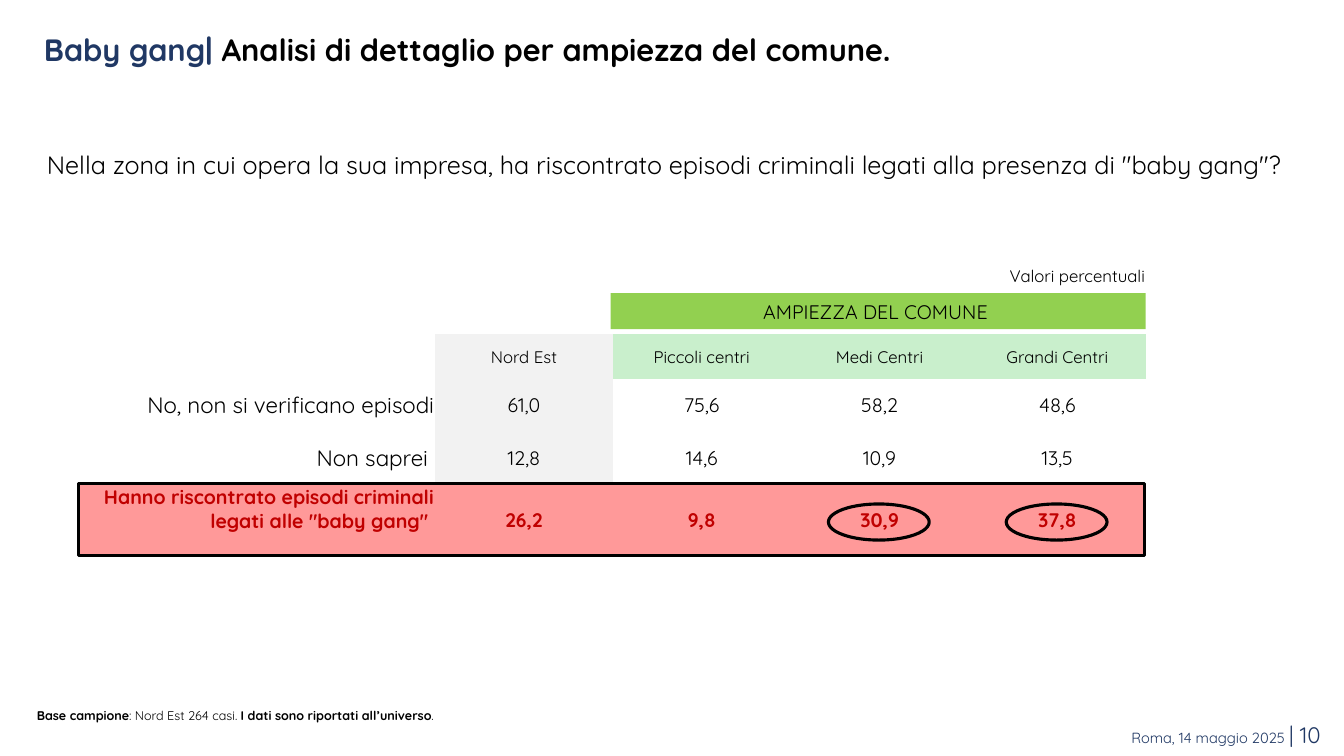
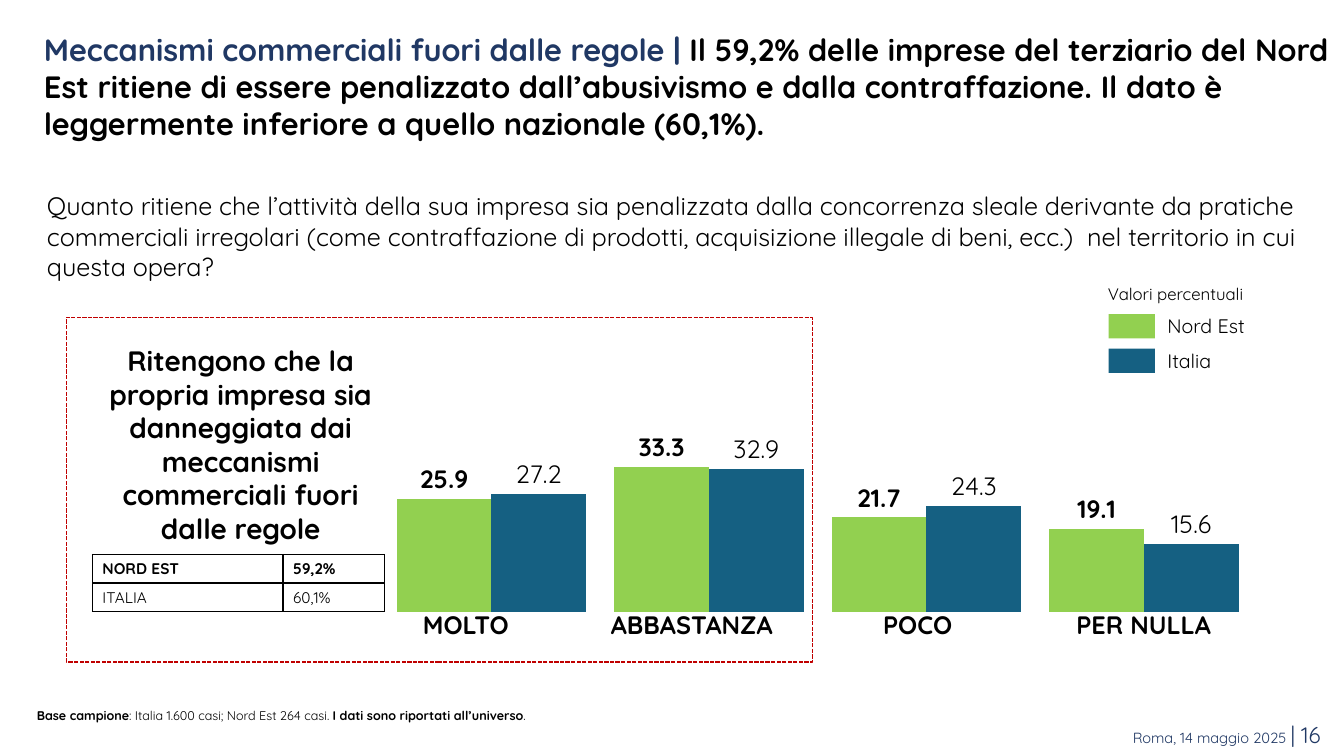
from dataclasses import dataclass
from typing import NamedTuple

from pptx import Presentation, util as u
from pptx.chart.data import CategoryChartData
from pptx.dml.color import RGBColor
from pptx.enum import chart as ch, dml, shapes as sh, text as tx
from pptx.oxml import parse_xml
from pptx.oxml.ns import nsdecls, qn

BLACK = RGBColor(0x00, 0x00, 0x00)
WHITE = RGBColor(0xFF, 0xFF, 0xFF)
NAVY = RGBColor(0x20, 0x38, 0x64)
GREEN = RGBColor(0x92, 0xD0, 0x50)
BLUE = RGBColor(0x15, 0x60, 0x82)
MINT = RGBColor(0xC9, 0xEF, 0xCC)
GREY = RGBColor(0xF2, 0xF2, 0xF2)
PINK = RGBColor(0xFF, 0x99, 0x99)
RED = RGBColor(0xC0, 0x00, 0x00)

FONT = "Quicksand"
COLS, ROWS = 160, 90
UNIT = u.Inches(13.333) / COLS
NO_STYLE = "{2D5ABB26-0587-4C30-8999-92F81FD0307C}"
LEFT, MID, RIGHT = tx.PP_ALIGN.LEFT, tx.PP_ALIGN.CENTER, tx.PP_ALIGN.RIGHT


class Box(NamedTuple):
    """A place on the grid, in columns and rows."""
    x: float
    y: float
    w: float
    h: float


class Run(NamedTuple):
    text: str
    size: float
    bold: bool = False
    color: RGBColor = BLACK


@dataclass
class Series:
    name: str
    color: RGBColor
    bold: bool
    values: tuple[float, ...]


@dataclass
class Line:
    """A table row: label, values and their looks."""
    label: str
    values: tuple[str, ...]
    height: float
    size: float
    fills: tuple
    color: RGBColor = BLACK


def grid(n: float) -> int:
    return round(n * UNIT)


def place(box: Box) -> list[int]:
    return [grid(n) for n in box]


def write(frame, runs: list[Run], align=LEFT, space: float = 1) -> None:
    para = frame.paragraphs[0]
    para.alignment = align
    para.line_spacing = space
    for item in runs:
        run = para.add_run()
        run.text = item.text
        font = run.font
        font.name, font.size, font.bold = FONT, u.Pt(item.size), item.bold
        font.color.rgb = item.color


def label(slide, box: Box, runs: list[Run], align=LEFT, space: float = 1):
    frame = slide.shapes.add_textbox(*place(box)).text_frame
    frame.word_wrap = True
    write(frame, runs, align, space)
    return frame


def paint(part, color: RGBColor | None) -> None:
    if color is None:
        part.fill.background()
    else:
        part.fill.solid()
        part.fill.fore_color.rgb = color


def draw(slide, kind, box: Box, fill=None, line=None, width: float = 2.25):
    shape = slide.shapes.add_shape(kind, *place(box))
    shape.shadow.inherit = False
    paint(shape, fill)
    if line is None:
        shape.line.fill.background()
    else:
        shape.line.color.rgb = line
        shape.line.width = u.Pt(width)
    return shape


def table(slide, x: float, y: float, cols: list[float], rows: list[float]):
    box = Box(x, y, sum(cols), sum(rows))
    frame = slide.shapes.add_table(len(rows), len(cols), *place(box))
    for style in frame.element.iter(qn("a:tableStyleId")):
        style.text = NO_STYLE
    for col, width in zip(frame.table.columns, cols):
        col.width = grid(width)
    for row, height in zip(frame.table.rows, rows):
        row.height = grid(height)
    return frame


def border(frame) -> None:
    """Put a thin black line round every cell."""
    for props in frame.element.iter(qn("a:tcPr")):
        for i, side in enumerate("LRTB"):
            props.insert(i, parse_xml(
                f'<a:ln{side} {nsdecls("a")} w="12700"><a:solidFill>'
                f'<a:srgbClr val="{BLACK}"/></a:solidFill></a:ln{side}>'))


def start(deck, number: int, title: list[str], ask: str, ask_y: float, base: str):
    """Add a slide with title, question, base note and footer."""
    slide = deck.slides.add_slide(deck.slide_layouts[6])
    label(slide, Box(75.2, 85.3, 83.2, 4.4),
          [Run("Roma, 14 maggio 2025 ", 10.5, color=NAVY),
           Run(f"| {number}", 16, color=NAVY)], RIGHT)
    head = label(slide, Box(4.4, 3.2, 155, 5.4),
                 [Run(title[0], 22, True, NAVY), Run(title[1], 22, True)])
    head.margin_left = head.margin_right = u.Inches(0.07)
    head.margin_top = head.margin_bottom = u.Inches(0.04)
    label(slide, Box(4.4, ask_y, 152, 8.5), [Run(ask, 18)])
    label(slide, Box(3.2, 83.5, 150.5, 3),
          [Run("Base campione", 9, True), Run(f": {base}. ", 9),
           Run("I dati sono riportati all’universo", 9, True), Run(".", 9)],
          space=1.1)
    return slide


def gangs(deck) -> None:
    slide = start(
        deck, 10, ["Baby gang|", " Analisi di dettaglio per ampiezza del comune."],
        "Nella zona in cui opera la sua impresa, ha riscontrato episodi criminali "
        'legati alla presenza di "baby gang"?', 17.2, "Nord Est 264 casi")
    plain = (None, GREY, None, None, None)
    lines = [
        Line("", ("Nord Est", "Piccoli centri", "Medi Centri", "Grandi Centri"),
             5.3, 12, (WHITE, GREY, MINT, MINT, MINT)),
        Line("No, non si verificano episodi", ("61,0", "75,6", "58,2", "48,6"),
             6.25, 16, plain),
        Line("Non saprei ", ("12,8", "14,6", "10,9", "13,5"), 6.25, 16, plain),
        Line('Hanno riscontrato episodi criminali legati alle "baby gang" ',
             ("26,2", "9,8", "30,9", "37,8"), 8.5, 14, (PINK,) * 5, RED),
    ]
    left, top, first, step = 9.4, 39.8, 42.4, 21.17
    frame = table(slide, left, top, [first] + [step] * 4, [n.height for n in lines])
    for line, row in zip(lines, frame.table.rows):
        bold = line.color == RED
        for i, (cell, word) in enumerate(zip(row.cells, (line.label, *line.values))):
            cell.margin_left = cell.margin_right = cell.margin_top = u.Inches(0.01)
            cell.margin_bottom = 0
            high = bold and i == 0
            cell.vertical_anchor = tx.MSO_ANCHOR.TOP if high else tx.MSO_ANCHOR.MIDDLE
            paint(cell, line.fills[i])
            size = min(line.size, 14) if i else line.size
            write(cell.text_frame, [Run(word, size, bold, line.color)],
                  MID if i else RIGHT)

    band = draw(slide, sh.MSO_SHAPE.RECTANGLE, Box(72.7, 34.9, 63.7, 4.3), GREEN)
    write(band.text_frame, [Run("AMPIEZZA DEL COMUNE ", 14)], MID)
    label(slide, Box(111.7, 31, 25.8, 3.6), [Run("Valori percentuali", 12)], RIGHT)
    last = lines[-1].height
    y = top + sum(n.height for n in lines) - last
    draw(slide, sh.MSO_SHAPE.RECTANGLE, Box(9.3, y, 127, last), line=BLACK)
    for col in (2, 3):
        mid = left + first + step * (col + 0.5)
        draw(slide, sh.MSO_SHAPE.OVAL, Box(mid - 6.1, 60, 12, 4.3), line=BLACK)


def bars(slide, box: Box, names: list[str], series: list[Series]) -> None:
    data = CategoryChartData(number_format="0.0")
    data.categories = names
    for item in series:
        data.add_series(item.name, item.values)
    chart = slide.shapes.add_chart(
        ch.XL_CHART_TYPE.COLUMN_CLUSTERED, *place(box), data).chart
    chart.has_title = chart.has_legend = False
    chart.font.name, chart.font.size = "Arial", u.Pt(10)
    chart.font.color.rgb = BLACK
    axis = chart.value_axis
    axis.minimum_scale, axis.maximum_scale = 0, 40
    axis.has_major_gridlines = axis.visible = False
    chart.category_axis.visible = False
    plot = chart.plots[0]
    plot.gap_width, plot.overlap, plot.vary_by_categories = 30, 0, False
    for item, part in zip(series, plot.series):
        paint(part.format, item.color)
        tags = part.data_labels
        tags.show_value = True
        tags.position = ch.XL_LABEL_POSITION.OUTSIDE_END
        tags.number_format, tags.number_format_is_linked = "0.0", False
        font = tags.font
        font.name, font.size, font.bold = FONT, u.Pt(18), item.bold
        font.color.rgb = BLACK
    area = next(chart.element.iter(qn("c:plotArea")))
    for old in area.findall(qn("c:layout")):
        area.remove(old)
    spots = "".join(f'<c:{k} val="{v}"/>' for k, v in
                    (("x", 0.02), ("y", 0.03), ("w", 0.96), ("h", 0.94)))
    area.insert(0, parse_xml(
        f'<c:layout {nsdecls("c")}><c:manualLayout><c:layoutTarget val="inner"/>'
        f'<c:xMode val="edge"/><c:yMode val="edge"/>{spots}'
        '</c:manualLayout></c:layout>'))


def rules(deck) -> None:
    slide = start(
        deck, 16, ["Meccanismi commerciali fuori dalle regole |",
                   " Il 59,2% delle imprese del terziario del Nord Est ritiene di essere "
                   "penalizzato dall’abusivismo e dalla contraffazione. Il dato è "
                   "leggermente inferiore a quello nazionale (60,1%)."],
        "Quanto ritiene che l’attività della sua impresa sia penalizzata dalla "
        "concorrenza sleale derivante da pratiche commerciali irregolari (come "
        "contraffazione di prodotti, acquisizione illegale di beni, ecc.)  nel "
        "territorio in cui questa opera?", 22.1, "Italia 1.600 casi; Nord Est 264 casi")
    frame = draw(slide, sh.MSO_SHAPE.RECTANGLE, Box(7.9, 37.8, 88.8, 41),
                 line=RED, width=1)
    frame.line.dash_style = dml.MSO_LINE.SQUARE_DOT
    names = ["MOLTO", "ABBASTANZA", "POCO", "PER NULLA"]
    for i, name in enumerate(names):
        label(slide, Box(41.6 + 26.9 * i, 71.6, 27.7, 4.9),
              [Run(name, 18, True)], MID, 1.1)
    label(slide, Box(9.4, 40.3, 38.5, 25.4),
          [Run("Ritengono che la propria impresa sia danneggiata dai meccanismi "
               "commerciali fuori dalle regole", 20, True)], MID)

    sums = [("NORD EST", "59,2%"), ("ITALIA", "60,1%")]
    frame = table(slide, 11, 66, [22.7, 12.1], [3.4] * 2)
    for i, (row, words) in enumerate(zip(frame.table.rows, sums)):
        for cell, word in zip(row.cells, words):
            cell.vertical_anchor = tx.MSO_ANCHOR.MIDDLE
            paint(cell, WHITE)
            write(cell.text_frame, [Run(word, 11, i == 0)])
    border(frame)

    series = [Series("Nord Est", GREEN, True, (25.9, 33.3, 21.7, 19.1)),
              Series("Italia", BLUE, False, (27.2, 32.9, 24.3, 15.6))]
    label(slide, Box(128.6, 33.2, 20.6, 3.6), [Run("Valori percentuali", 12)], RIGHT)
    for i, item in enumerate(series):
        y = 36.8 + 4.1 * i
        draw(slide, sh.MSO_SHAPE.RECTANGLE, Box(132, y + 0.6, 5.5, 2.9), item.color)
        label(slide, Box(137.8, y, 16.1, 4.1), [Run(item.name, 14)])
    bars(slide, Box(43.4, 51.4, 107.9, 22.1), names, series)


def main() -> None:
    deck = Presentation()
    deck.slide_width, deck.slide_height = grid(COLS), grid(ROWS)
    gangs(deck)
    rules(deck)
    deck.save("out.pptx")


if __name__ == "__main__":
    main()
